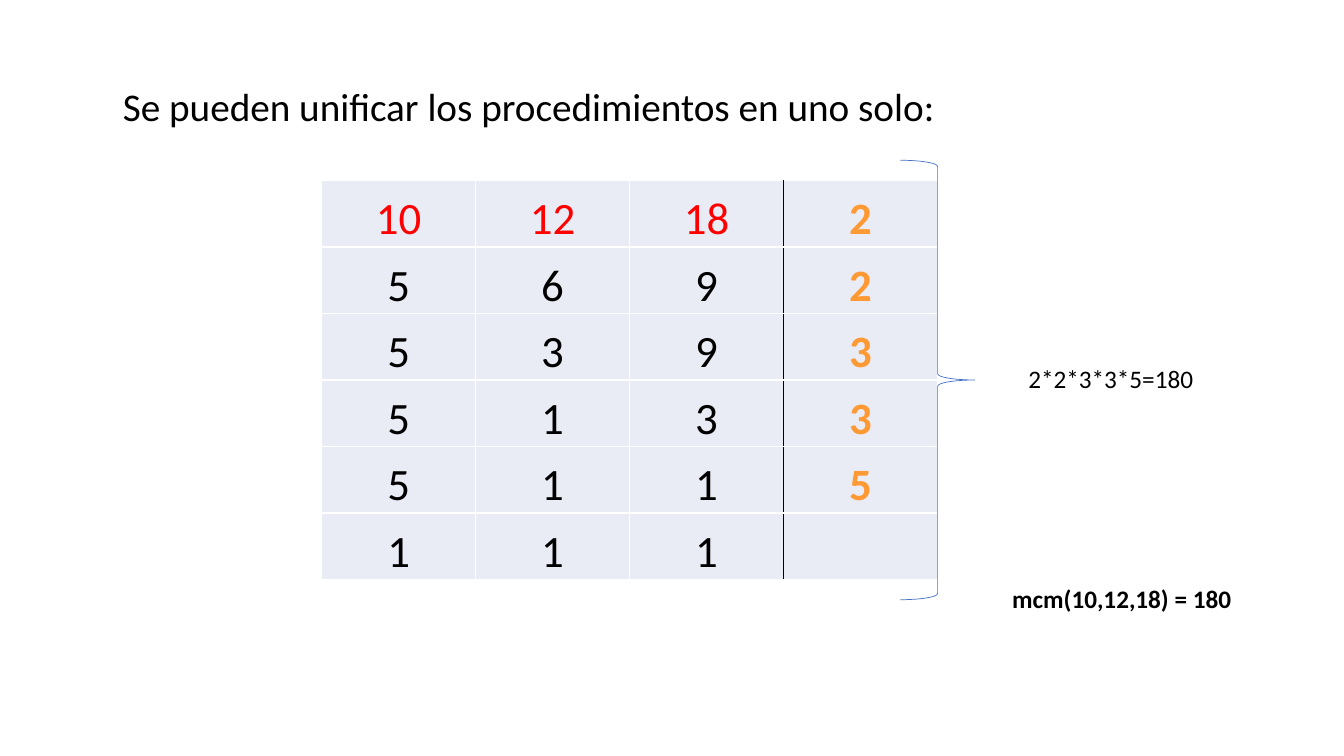
import dataclasses
import pptx
import pptx.dml.color
import pptx.enum.shapes
import pptx.enum.text
import pptx.oxml
import pptx.oxml.ns
import pptx.util
from pptx.util import Inches

ALIGN = pptx.enum.text.PP_ALIGN
ANCHOR = pptx.enum.text.MSO_ANCHOR


# Colours and type sizes
@dataclasses.dataclass(frozen=True)
class Theme:
    font: str = "Calibri"
    ink: str = "000000"
    given: str = "FF0000"
    prime: str = "FF9933"
    cell: str = "E9EBF5"
    rule: str = "FFFFFF"
    brace: str = "4472C4"
    title: int = 28
    number: int = 32
    label: int = 18


THEME = Theme()
ROWS = [
    ("10", "12", "18", "2"),
    ("5", "6", "9", "2"),
    ("5", "3", "9", "3"),
    ("5", "1", "3", "3"),
    ("5", "1", "1", "5"),
    ("1", "1", "1", ""),
]


def rgb(color):
    return pptx.dml.color.RGBColor.from_string(color)


def style(para, size, color, bold=False):
    for run in para.runs:
        run.font.name = THEME.font
        run.font.size = pptx.util.Pt(size)
        run.font.bold = bold
        run.font.color.rgb = rgb(color)


def add_text(slide, box, text, size, bold=False, wrap=False):
    frame = slide.shapes.add_textbox(*map(Inches, box)).text_frame
    frame.word_wrap = wrap
    if not wrap:
        frame.auto_size = pptx.enum.text.MSO_AUTO_SIZE.SHAPE_TO_FIT_TEXT
    frame.text = text
    para = frame.paragraphs[0]
    style(para, size, THEME.ink, bold)
    return para


# Heading
def add_title(slide, box):
    para = add_text(slide, box, "Se pueden unificar los procedimientos en uno solo:",
                    THEME.title, wrap=True)
    para.line_spacing = 0.8


def add_edge(cell, side, color):
    cell._tc.get_or_add_tcPr().append(pptx.oxml.parse_xml(
        f'<a:ln{side} {pptx.oxml.ns.nsdecls("a")} w="12700"><a:solidFill>'
        f'<a:srgbClr val="{color}"/></a:solidFill></a:ln{side}>'))


def fill_cell(cell, text, row, col, last):
    # A dark line sets the prime factors apart
    dark = {last - 1: "R", last: "L"}.get(col)
    for side in "LRTB":
        add_edge(cell, side, THEME.ink if side == dark else THEME.rule)
    cell.fill.solid()
    cell.fill.fore_color.rgb = rgb(THEME.cell)
    cell.margin_left = cell.margin_right = cell.margin_top = Inches(0.01)
    cell.margin_bottom = 0
    cell.vertical_anchor = ANCHOR.BOTTOM
    cell.text = text
    para = cell.text_frame.paragraphs[0]
    para.alignment = ALIGN.CENTER
    prime = col == last
    color = THEME.prime if prime else THEME.given if row == 0 else THEME.ink
    style(para, THEME.number, color, prime)


# Table of divisions
def add_grid(slide, box):
    left, top, width, height = map(Inches, box)
    count = len(ROWS[0])
    table = slide.shapes.add_table(len(ROWS), count, left, top, width, height).table
    table.first_row = table.horz_banding = False
    for col in table.columns:
        col.width = width // count
    for row, texts in enumerate(ROWS):
        table.rows[row].height = height // len(ROWS)
        for col, text in enumerate(texts):
            fill_cell(table.cell(row, col), text, row, col, count - 1)


# Brace with the product and the result
def add_result(slide, box):
    left, top, width, height = box
    brace = slide.shapes.add_shape(
        pptx.enum.shapes.MSO_SHAPE.RIGHT_BRACE, *map(Inches, box))
    brace.shadow.inherit = False
    brace.fill.background()
    brace.line.color.rgb = rgb(THEME.brace)
    brace.line.width = pptx.util.Pt(0.5)
    right = left + width
    add_text(slide, (right + 0.43, top + height / 2 - 0.21, 1.92, 0.4),
             "2*2*3*3*5=180", THEME.label)
    add_text(slide, (right + 0.27, top + height - 0.21, 2.49, 0.4),
             "mcm(10,12,18) = 180", THEME.label, bold=True)


def main():
    deck = pptx.Presentation()
    deck.slide_width, deck.slide_height = Inches(13.33), Inches(7.5)
    slide = deck.slides.add_slide(deck.slide_layouts[6])
    add_title(slide, (1.12, 0.86, 10.63, 0.5))
    add_grid(slide, (3.19, 1.79, 6.11, 3.96))
    add_result(slide, (8.93, 1.59, 0.74, 4.36))
    deck.save("out.pptx")


if __name__ == "__main__":
    main()
